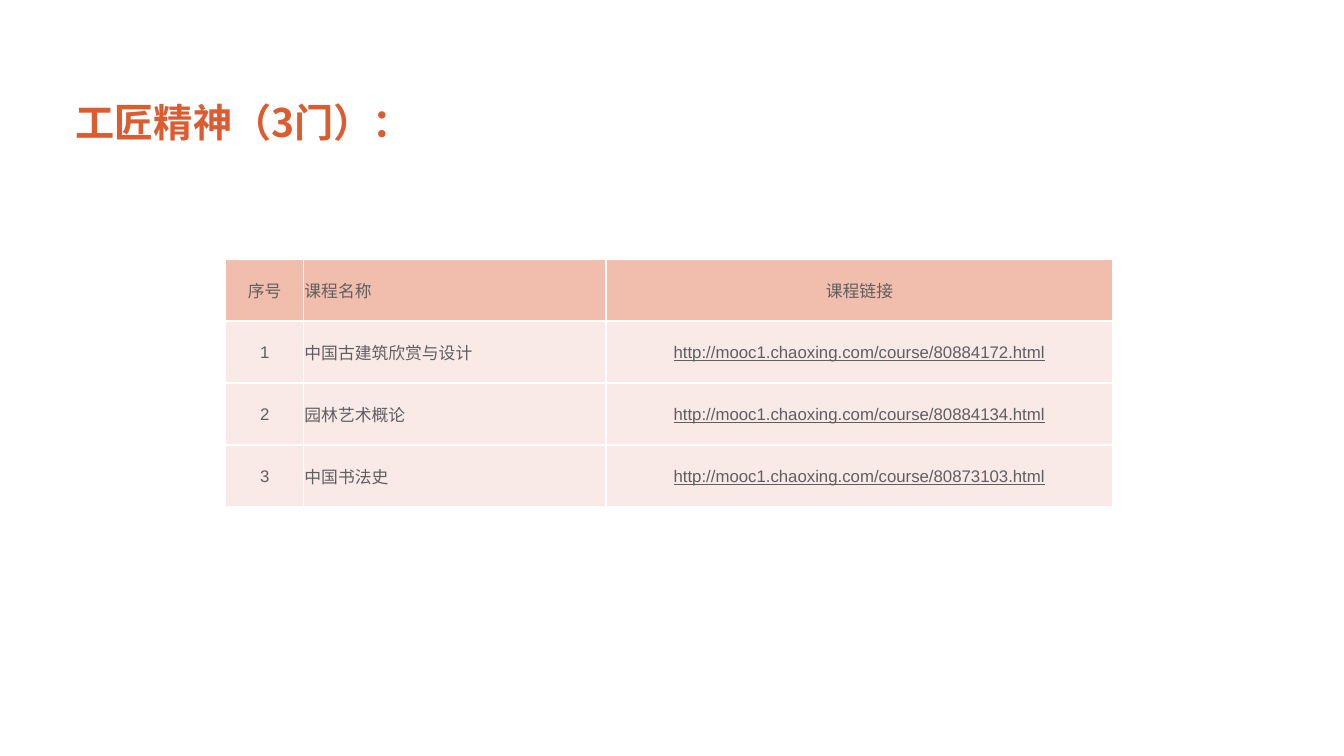
import pptx
import pptx.util
import pptx.dml.color
import pptx.enum.text
import pptx.oxml
import pptx.oxml.ns
from dataclasses import dataclass

Inches = pptx.util.Inches
Pt = pptx.util.Pt
RGB = pptx.dml.color.RGBColor.from_string
Align = pptx.enum.text.PP_ALIGN
Anchor = pptx.enum.text.MSO_ANCHOR


@dataclass(frozen=True)
class Theme:
    heading: str = "DC5C31"
    body: str = "5F5F5F"
    header_fill: str = "F1BEAD"
    row_fill: str = "F9EAE8"
    border: str = "FFFFFF"
    heading_size: int = 28
    body_size: int = 12
    latin: str = "Arial"
    chinese: str = "Noto Sans CJK SC"


theme = Theme()


def style(paragraph, face, size, color, align):
    paragraph.alignment = align
    font = paragraph.font
    font.name = face
    font.size = Pt(size)
    font.color.rgb = RGB(color)
    latin = paragraph._p.pPr.find(".//" + pptx.oxml.ns.qn("a:latin"))
    latin.addnext(pptx.oxml.parse_xml(
        f'<a:ea {pptx.oxml.ns.nsdecls("a")} typeface="{theme.chinese}"/>'))
    return font


def add_borders(cell, color):
    for side in ("lnL", "lnR", "lnT", "lnB"):
        cell._tc.get_or_add_tcPr().append(pptx.oxml.parse_xml(
            f'<a:{side} {pptx.oxml.ns.nsdecls("a")} w="{Pt(1)}">'
            f'<a:solidFill><a:srgbClr val="{color}"/></a:solidFill></a:{side}>'))


deck = pptx.Presentation()
deck.slide_width = Inches(13.33)
deck.slide_height = Inches(7.5)
slide = deck.slides.add_slide(deck.slide_layouts[5])

heading = slide.shapes.title
heading.left, heading.top = Inches(0.65), Inches(0.73)
heading.width, heading.height = Inches(11.9), Inches(0.77)
heading.text_frame.text = "工匠精神（3门）："
heading.text_frame.vertical_anchor = Anchor.BOTTOM
heading.text_frame.auto_size = pptx.enum.text.MSO_AUTO_SIZE.NONE
heading_line = heading.text_frame.paragraphs[0]
heading_line.line_spacing = 0.9
style(heading_line, theme.chinese, theme.heading_size, theme.heading, Align.LEFT).bold = True

courses = [
    ("序号", "课程名称", "课程链接"),
    ("1", "中国古建筑欣赏与设计", "http://mooc1.chaoxing.com/course/80884172.html"),
    ("2", "园林艺术概论", "http://mooc1.chaoxing.com/course/80884134.html"),
    ("3", "中国书法史", "http://mooc1.chaoxing.com/course/80873103.html"),
]
column_widths = (0.77, 3, 5.03)
column_aligns = (Align.CENTER, Align.LEFT, Align.CENTER)

course_table = slide.shapes.add_table(
    len(courses), len(column_widths),
    Inches(2.24), Inches(2.57), Inches(8.8), Inches(2.46)).table
course_table.first_row = False
course_table.horz_banding = False
for column, width in zip(course_table.columns, column_widths):
    column.width = Inches(width)

for row, course in enumerate(courses):
    for col, (entry, align) in enumerate(zip(course, column_aligns)):
        cell = course_table.cell(row, col)
        cell.text = entry
        cell.vertical_anchor = Anchor.MIDDLE
        cell.margin_left = cell.margin_right = cell.margin_top = Inches(0.01)
        cell.margin_bottom = 0
        add_borders(cell, theme.border)
        cell.fill.solid()
        cell.fill.fore_color.rgb = RGB(theme.row_fill if row else theme.header_fill)
        font = style(cell.text_frame.paragraphs[0], theme.latin,
                     theme.body_size, theme.body, align)
        if row and col == 2:
            font.underline = True

deck.save("out.pptx")
